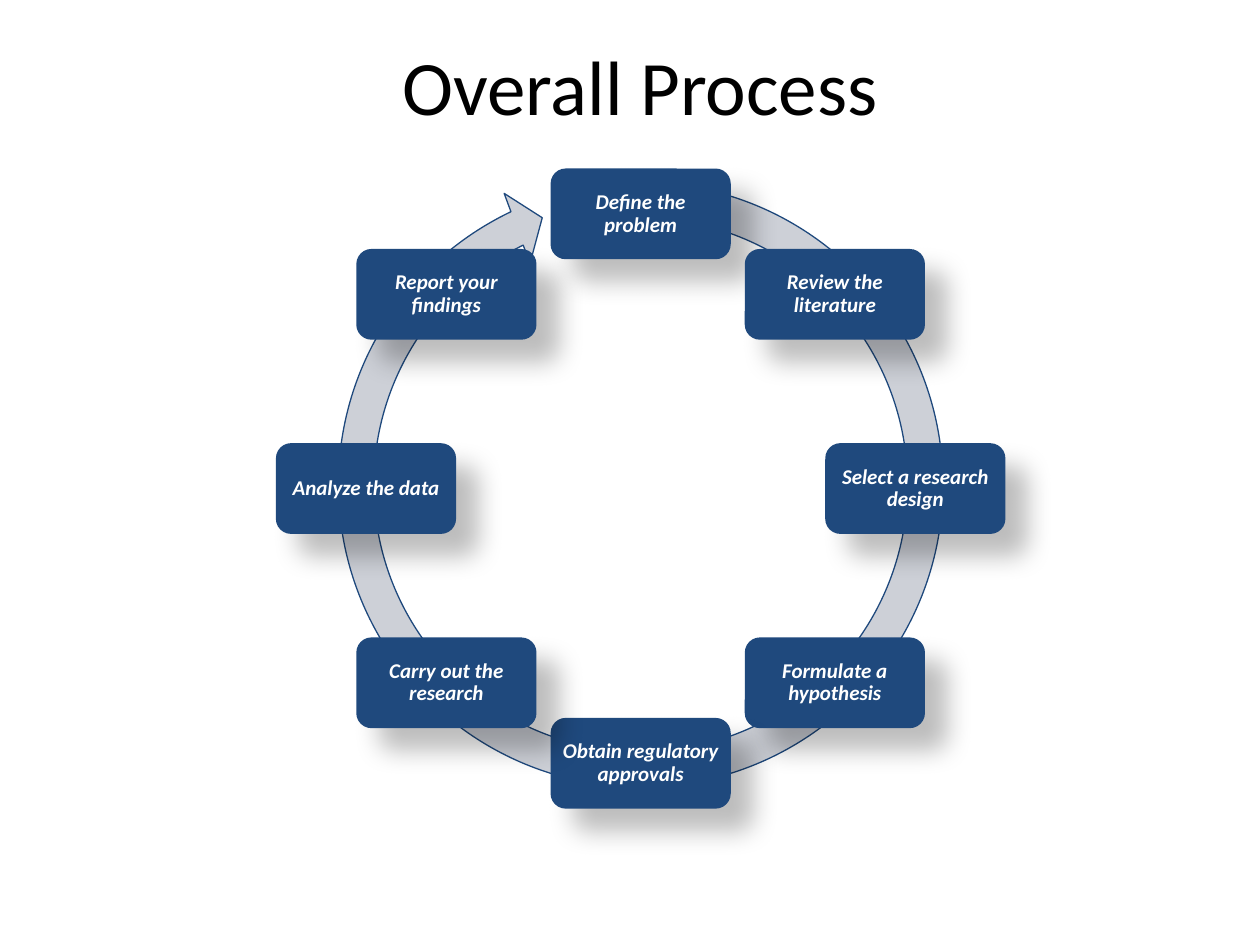
"""Build the Overall Process slide: eight steps around a circular arrow."""
from math import cos, pi, sin

from lxml.etree import SubElement
from pptx import Presentation
from pptx.dml.color import RGBColor
from pptx.enum.shapes import MSO_SHAPE
from pptx.enum.text import MSO_ANCHOR, PP_ALIGN
from pptx.oxml.ns import qn
from pptx.util import Inches, Pt

NAVY = RGBColor(0x1F, 0x49, 0x7D)
GREY = RGBColor(0xCD, 0xD0, 0xD7)
WHITE = RGBColor(0xFF, 0xFF, 0xFF)
BLACK = RGBColor(0x00, 0x00, 0x00)
FONT = "Calibri"
STEPS = [
    "Define the problem",
    "Review the literature",
    "Select a research design",
    "Formulate a hypothesis",
    "Obtain regulatory approvals",
    "Carry out the research",
    "Analyze the data",
    "Report your findings",
]


def place(shapes, kind, mid_x, mid_y, wide, high):
    return shapes.add_shape(
        kind, int(mid_x - wide / 2), int(mid_y - high / 2), int(wide), int(high))


def cast(shape):
    effects = SubElement(shape._element.spPr, qn("a:effectLst"))
    shadow = SubElement(
        effects, qn("a:outerShdw"), blurRad=str(Pt(15)), dist=str(Pt(18)),
        dir=str(45 * 60000), algn="tl", rotWithShape="0")
    color = SubElement(shadow, qn("a:srgbClr"), val=str(BLACK))
    SubElement(color, qn("a:alpha"), val="26000")


deck = Presentation()
deck.slide_width = Inches(10)
deck.slide_height = Inches(7.5)
W, H = deck.slide_width, deck.slide_height
slide = deck.slides.add_slide(deck.slide_layouts[5])

title = slide.shapes.title
title.left, title.top = int(W * 0.058), int(H * 0.028)
title.width, title.height = int(W * 0.9), int(H * 0.123)
title.text_frame.text = "Overall Process"
title.text_frame.vertical_anchor = MSO_ANCHOR.MIDDLE
head = title.text_frame.paragraphs[0]
head.alignment = PP_ALIGN.CENTER
head.font.name = FONT
head.font.size = Pt(44)
head.font.color.rgb = BLACK

mid_x, mid_y = W * 0.5085, H * 0.517
radius = W * 0.218
cycle = slide.shapes.add_group_shape().shapes

ring = place(cycle, MSO_SHAPE.CIRCULAR_ARROW, mid_x, H * 0.513, W * 0.511, W * 0.511)
for i, value in enumerate((0.055, 3.307, 146.553, 168.708, 0.058)):
    ring.adjustments[i] = value
ring.shadow.inherit = False
ring.fill.solid()
ring.fill.fore_color.rgb = GREY
ring.line.color.rgb = NAVY
ring.line.width = Pt(0.75)

for i, step in enumerate(STEPS):
    turn = 2 * pi * i / len(STEPS)
    box = place(
        cycle, MSO_SHAPE.ROUNDED_RECTANGLE, mid_x + radius * sin(turn),
        mid_y - radius * cos(turn), W * 0.143, H * 0.096)
    box.fill.solid()
    box.fill.fore_color.rgb = NAVY
    box.line.fill.background()
    cast(box)
    frame = box.text_frame
    frame.text = step
    frame.word_wrap = True
    frame.vertical_anchor = MSO_ANCHOR.MIDDLE
    frame.margin_left = frame.margin_right = int(W * 0.005)
    frame.margin_top = frame.margin_bottom = int(W * 0.005)
    label = frame.paragraphs[0]
    label.alignment = PP_ALIGN.CENTER
    label.line_spacing = 0.9
    font = label.runs[0].font
    font.name = FONT
    font.size = Pt(12)
    font.bold = font.italic = True
    font.color.rgb = WHITE

deck.save("out.pptx")
